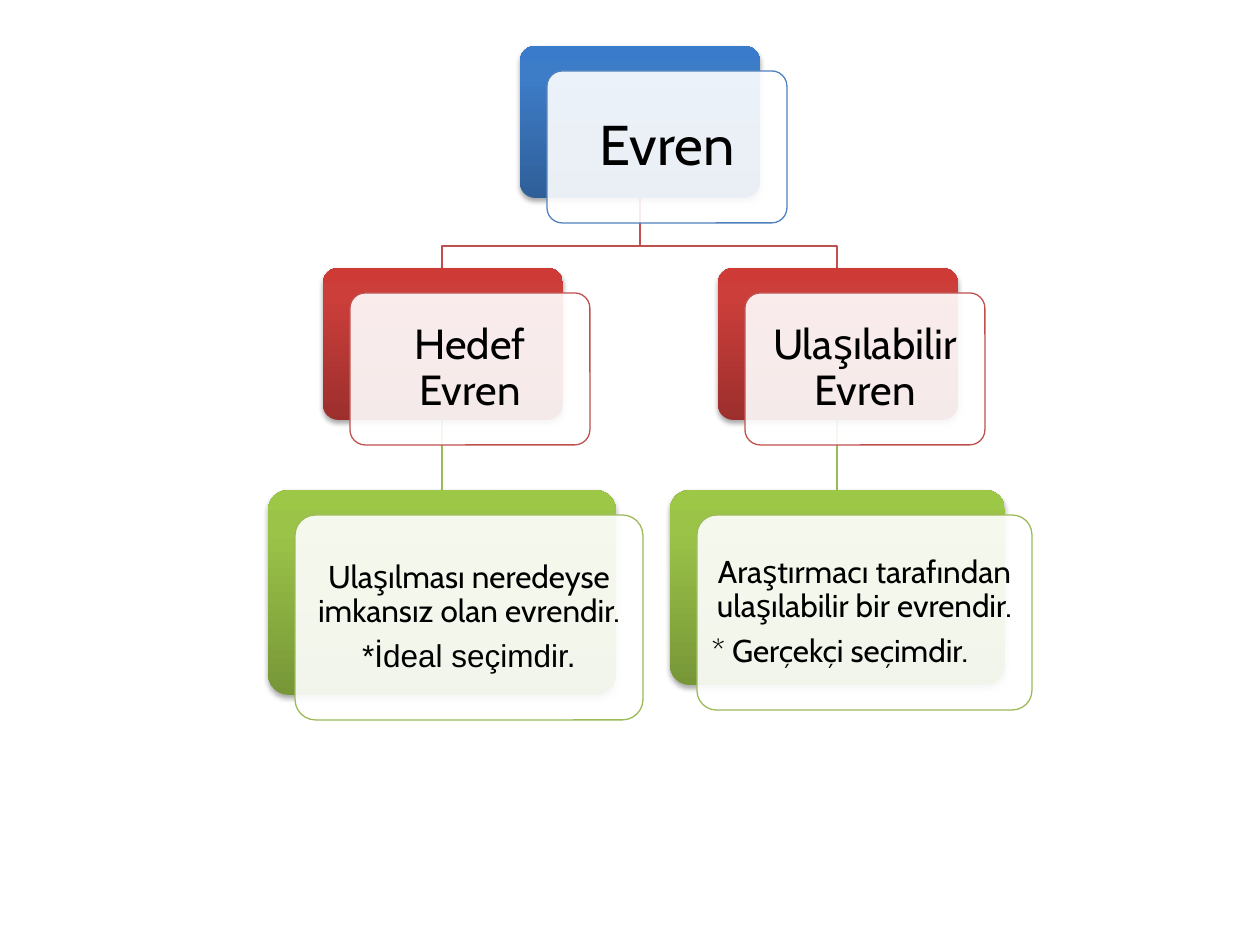
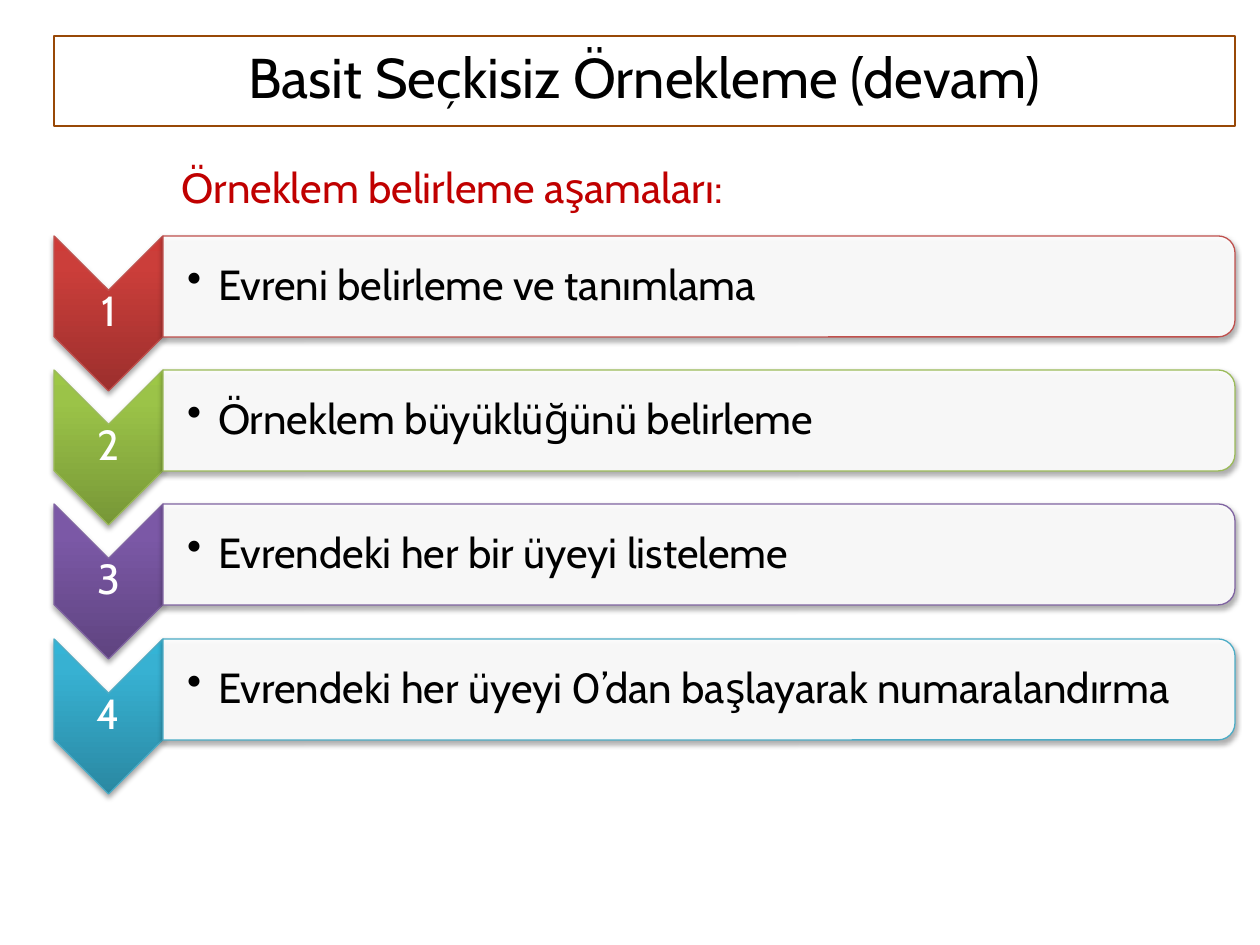
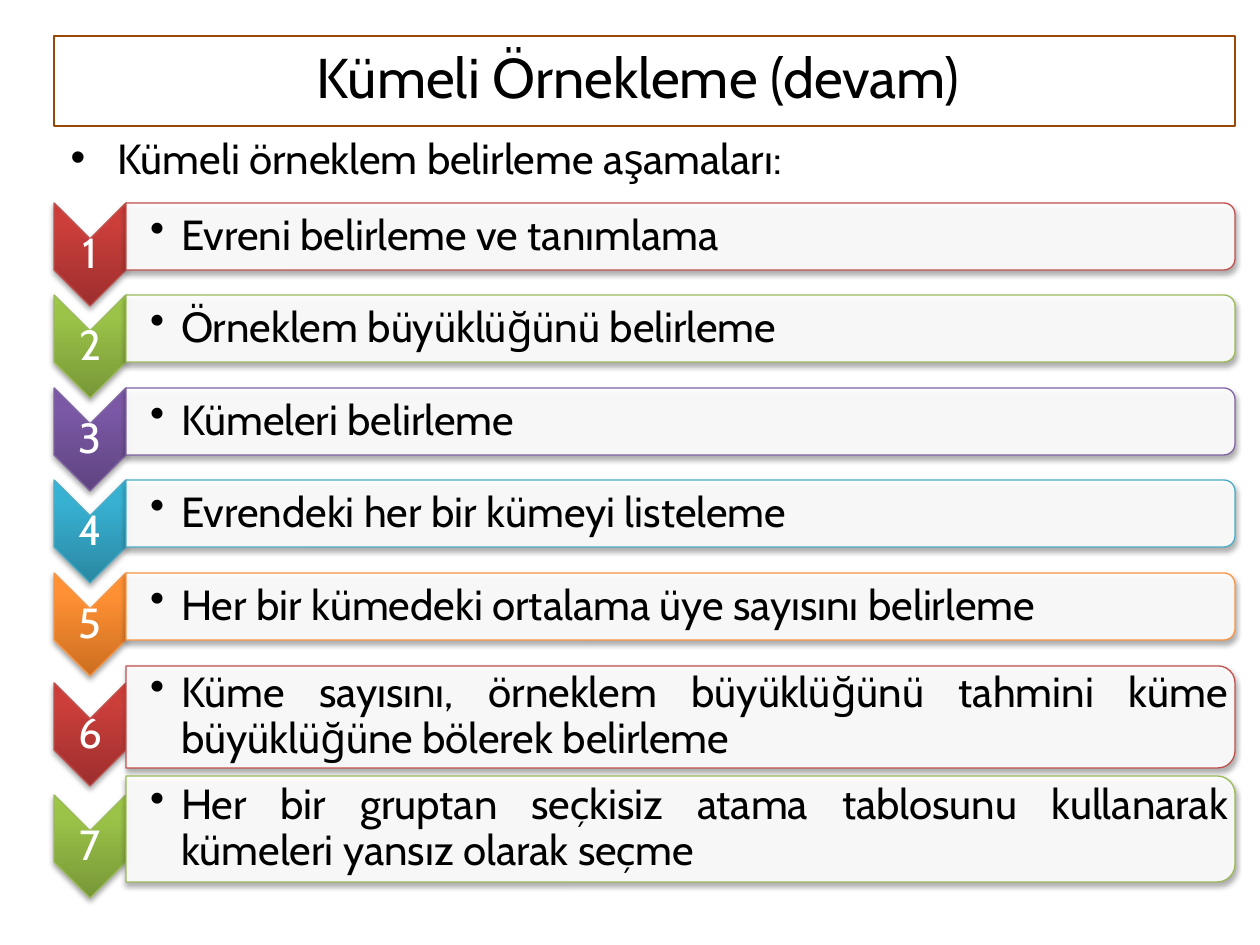
import pptx
import pptx.util
import pptx.dml.color
import pptx.enum.shapes
import pptx.enum.text
from pptx.oxml import parse_xml
from pptx.oxml.ns import nsdecls, qn

PX = 914400 // 126
SHAPES = pptx.enum.shapes.MSO_SHAPE
ALIGN = pptx.enum.text.PP_ALIGN
ANCHOR = pptx.enum.text.MSO_ANCHOR
FONT = "Cabin"
BLACK, WHITE, HEADING_RED, TITLE_BORDER = "000000", "FFFFFF", "C00000", "984807"

# Each accent: line colour, then gradient colours at 0, 80 and 100 percent.
BLUE = ("4F81BD", ("2F5F99", "3D7CC7", "3A7CCB"))
RED = ("C0504D", ("9C2F2D", "CB3E3A", "CE3B37"))
GREEN = ("9BBB59", ("779737", "9BC348", "9DC746"))
PURPLE = ("8064A2", ("5F4480", "7B58A6", "7C57A8"))
AQUA = ("4BACC6", ("2A88A2", "37B1D2", "34B4D6"))
ORANGE = ("F79646", ("CC6E20", "FF9034", "FF9136"))
STEP_ACCENTS = (RED, GREEN, PURPLE, AQUA, ORANGE)

CARD_OFFSET = (27, 25)
# Cards: box of the back plate, accent, size, inset, paragraphs (text, font, alignment).
CARDS = [
    ((520, 46, 240, 152), BLUE, 32, 16, [("Evren", FONT, ALIGN.CENTER)]),
    ((323, 268, 240, 152), RED, 24, 13, [("Hedef Evren", FONT, ALIGN.CENTER)]),
    ((268, 490, 348, 205), GREEN, 18, 9, [
        ("Ulaşılması neredeyse imkansız olan evrendir.", FONT, ALIGN.CENTER),
        ("*İdeal seçimdir.", "Arial", ALIGN.CENTER)]),
    ((718, 268, 240, 152), RED, 24, 13, [("Ulaşılabilir Evren", FONT, ALIGN.CENTER)]),
    ((670, 490, 335, 195), GREEN, 18, 9, [
        ("Araştırmacı tarafından ulaşılabilir bir evrendir.", FONT, ALIGN.CENTER),
        ("* Gerçekçi seçimdir.", FONT, ALIGN.LEFT)]),
]
ROOT_X, ROOT_BOTTOM, FORK_Y = 640, 198, 246
BRANCH_XS = (442, 837)
BRANCH_TOP, BRANCH_BOTTOM, LEAF_TOP = 268, 420, 490

LEFT, RIGHT = 54, 1235
TITLE_BOX = (54, 36, 1181, 90)
STEP_SLIDES = [
    {
        "title": "Basit Seçkisiz Örnekleme (devam)",
        "lead": "Örneklem belirleme aşamaları:",
        "lead_box": (169, 155, 952, 108), "lead_color": HEADING_RED, "lead_indent": 0,
        "chevron": (109, 155), "bar_height": 101, "first_top": 236, "last_top": 639,
        "steps": ["Evreni belirleme ve tanımlama",
                  "Örneklem büyüklüğünü belirleme",
                  "Evrendeki her bir üyeyi listeleme",
                  "Evrendeki her üyeyi 0’dan başlayarak numaralandırma"],
        "tall_steps": [],
    },
    {
        "title": "Kümeli Örnekleme (devam) ",
        "lead": "Kümeli örneklem belirleme aşamaları:",
        "lead_box": (58, 126, 1180, 100), "lead_color": BLACK, "lead_indent": 47,
        "chevron": (72, 103), "bar_height": 67, "first_top": 203, "last_top": 573,
        "steps": ["Evreni belirleme ve tanımlama",
                  "Örneklem büyüklüğünü belirleme",
                  "Kümeleri belirleme",
                  "Evrendeki her bir kümeyi listeleme",
                  "Her bir kümedeki ortalama üye sayısını belirleme"],
        "tall_steps": [
            ("Küme sayısını, örneklem büyüklüğünü tahmini küme büyüklüğüne bölerek belirleme",
             666, 102),
            ("Her bir gruptan seçkisiz atama tablosunu kullanarak kümeleri yansız olarak seçme",
             776, 106)],
    },
]


def px(*lengths):
    return [pptx.util.Emu(int(length * PX)) for length in lengths]


def rgb(color):
    return pptx.dml.color.RGBColor.from_string(color)


def set_line(shape, color):
    shape.line.color.rgb = rgb(color)
    shape.line.width = pptx.util.Pt(0.75)


def add_plain_shape(slide, kind, box, turned=False):
    """Add a preset shape that covers box, also when turned by 90 degrees."""
    left, top, width, height = box
    if turned:
        left, top = left + (width - height) / 2, top + (height - width) / 2
        width, height = height, width
    shape = slide.shapes.add_shape(kind, *px(left, top, width, height))
    shape.rotation = 90 if turned else 0
    shape.shadow.inherit = False
    shape.line.fill.background()
    return shape


def fill_gradient(shape, colors):
    shape.fill.gradient()
    stops = "".join(f'<a:gs pos="{position}"><a:srgbClr val="{color}"/></a:gs>'
                    for position, color in zip((0, 80000, 100000), colors))
    properties = shape._element.spPr
    properties.replace(properties.find(qn("a:gradFill")), parse_xml(
        f'<a:gradFill {nsdecls("a")} rotWithShape="0"><a:gsLst>{stops}</a:gsLst>'
        '<a:lin ang="16200000" scaled="0"/></a:gradFill>'))


def fill_frosted(shape):
    """Fill with white at 90 percent opacity."""
    shape.fill.solid()
    shape.fill.fore_color.rgb = rgb(WHITE)
    color = shape._element.spPr.find(qn("a:solidFill")).find(qn("a:srgbClr"))
    color.append(parse_xml(f'<a:alpha {nsdecls("a")} val="90000"/>'))


def drop_shadow(shape):
    shape._element.spPr.find(qn("a:effectLst")).append(parse_xml(
        f'<a:outerShdw {nsdecls("a")} blurRad="40000" dist="23000" dir="5400000" '
        'rotWithShape="0"><a:srgbClr val="000000"><a:alpha val="35000"/>'
        '</a:srgbClr></a:outerShdw>'))


def set_bullet(paragraph, indent):
    """Hang a bullet by indent, or remove it when indent is 0."""
    properties = paragraph._p.get_or_add_pPr()
    properties.set("marL", str(indent * PX))
    properties.set("indent", str(-indent * PX))
    bullet = (f'<a:buChar {nsdecls("a")} char="•"/>' if indent
              else f'<a:buNone {nsdecls("a")}/>')
    properties.append(parse_xml(bullet))


def add_run(paragraph, text, size, color=BLACK, font=FONT):
    run = paragraph.add_run()
    run.text = text
    run.font.name = font
    run.font.size = pptx.util.Pt(size)
    run.font.color.rgb = rgb(color)


def prepare_frame(shape, insets, anchor):
    frame = shape.text_frame
    frame.word_wrap = True
    frame.auto_size = pptx.enum.text.MSO_AUTO_SIZE.NONE
    frame.vertical_anchor = anchor
    (frame.margin_left, frame.margin_top,
     frame.margin_right, frame.margin_bottom) = px(*insets)
    return frame


def add_label(slide, box, left_inset):
    """Add a middle-anchored text box and return its paragraph."""
    text_box = slide.shapes.add_textbox(*px(*box))
    paragraph = prepare_frame(text_box, (left_inset, 2, 2, 2), ANCHOR.MIDDLE).paragraphs[0]
    paragraph.line_spacing = 0.9
    return paragraph


def add_card(slide, box, accent, size, inset, paragraphs):
    line_color, gradient = accent
    left, top, width, height = box
    plate = add_plain_shape(slide, SHAPES.ROUNDED_RECTANGLE, box)
    fill_gradient(plate, gradient)
    drop_shadow(plate)
    panel = add_plain_shape(slide, SHAPES.ROUNDED_RECTANGLE,
                            (left + CARD_OFFSET[0], top + CARD_OFFSET[1], width, height))
    fill_frosted(panel)
    set_line(panel, line_color)
    plate.adjustments[0] = panel.adjustments[0] = 0.1
    frame = prepare_frame(panel, [inset] * 4, ANCHOR.MIDDLE)
    for index, (text, font, alignment) in enumerate(paragraphs):
        paragraph = frame.add_paragraph() if index else frame.paragraphs[0]
        paragraph.alignment = alignment
        paragraph.line_spacing = 0.9
        if index:
            paragraph.space_before = pptx.util.Pt(6.3)
        add_run(paragraph, text, size, font=font)


def add_branch(slide, x):
    """Draw the lines from the root card to a branch and on to its leaf."""
    stem = slide.shapes.add_connector(pptx.enum.shapes.MSO_CONNECTOR.STRAIGHT,
                                      *px(x, BRANCH_BOTTOM, x, LEAF_TOP))
    set_line(stem, GREEN[0])
    stem._element.spPr.append(parse_xml(f'<a:effectLst {nsdecls("a")}/>'))
    builder = slide.shapes.build_freeform(ROOT_X, ROOT_BOTTOM, scale=PX)
    builder.add_line_segments([(ROOT_X, FORK_Y), (x, FORK_Y), (x, BRANCH_TOP)], close=False)
    fork = builder.convert_to_shape()
    fork.shadow.inherit = False
    fork.fill.background()
    set_line(fork, RED[0])


def add_step(slide, number, text, bar_top, bar_height, content):
    line_color, gradient = STEP_ACCENTS[(number - 1) % len(STEP_ACCENTS)]
    width, height = content["chevron"]
    extra = bar_height - content["bar_height"]
    chevron_top = bar_top + extra // 2
    chevron = add_plain_shape(slide, SHAPES.CHEVRON, (LEFT, chevron_top, width, height), True)
    fill_gradient(chevron, gradient)
    label = add_label(slide, (LEFT, chevron_top + width // 2, width, height - width), 2)
    label.alignment = ALIGN.CENTER
    add_run(label, str(number), 24, WHITE)

    bar_left = LEFT + width
    bar_width = RIGHT - bar_left
    bar = add_plain_shape(slide, SHAPES.ROUND_2_SAME_RECTANGLE,
                          (bar_left, bar_top, bar_width, bar_height), True)
    fill_frosted(bar)
    for shape in (chevron, bar):
        set_line(shape, line_color)
        drop_shadow(shape)
    margin = round(bar_height / 21)
    item = add_label(slide, (bar_left, bar_top + margin, bar_width - margin,
                             bar_height - 2 * margin), 24)
    item.level = 1
    item.alignment = ALIGN.JUSTIFY if extra else ALIGN.LEFT
    set_bullet(item, 31)
    add_run(item, text, 24)


def place_placeholder(shape, box):
    shape.left, shape.top, shape.width, shape.height = px(*box)
    paragraph = prepare_frame(shape, (12.6, 6.3, 12.6, 6.3), ANCHOR.TOP).paragraphs[0]
    paragraph.space_before = pptx.util.Pt(0)
    return paragraph


def build_tree_slide(presentation):
    slide = presentation.slides.add_slide(presentation.slide_layouts[6])
    for x in BRANCH_XS:
        add_branch(slide, x)
    for card in CARDS:
        add_card(slide, *card)


def build_step_slide(presentation, content):
    slide = presentation.slides.add_slide(presentation.slide_layouts[1])
    title = place_placeholder(slide.shapes.title, TITLE_BOX)
    title.alignment = ALIGN.CENTER
    add_run(title, content["title"], 32)
    set_line(slide.shapes.title, TITLE_BORDER)

    lead = place_placeholder(slide.placeholders[1], content["lead_box"])
    set_bullet(lead, content["lead_indent"])
    add_run(lead, content["lead"], 24, content["lead_color"])

    steps, first = content["steps"], content["first_top"]
    span = content["last_top"] - first
    rows = [(text, first + span * index // (len(steps) - 1), content["bar_height"])
            for index, text in enumerate(steps)]
    for number, row in enumerate(rows + content["tall_steps"], start=1):
        add_step(slide, number, *row, content)


def main():
    presentation = pptx.Presentation()
    presentation.slide_width, presentation.slide_height = px(1260, 945)
    build_tree_slide(presentation)
    for content in STEP_SLIDES:
        build_step_slide(presentation, content)
    presentation.save("out.pptx")


if __name__ == "__main__":
    main()
